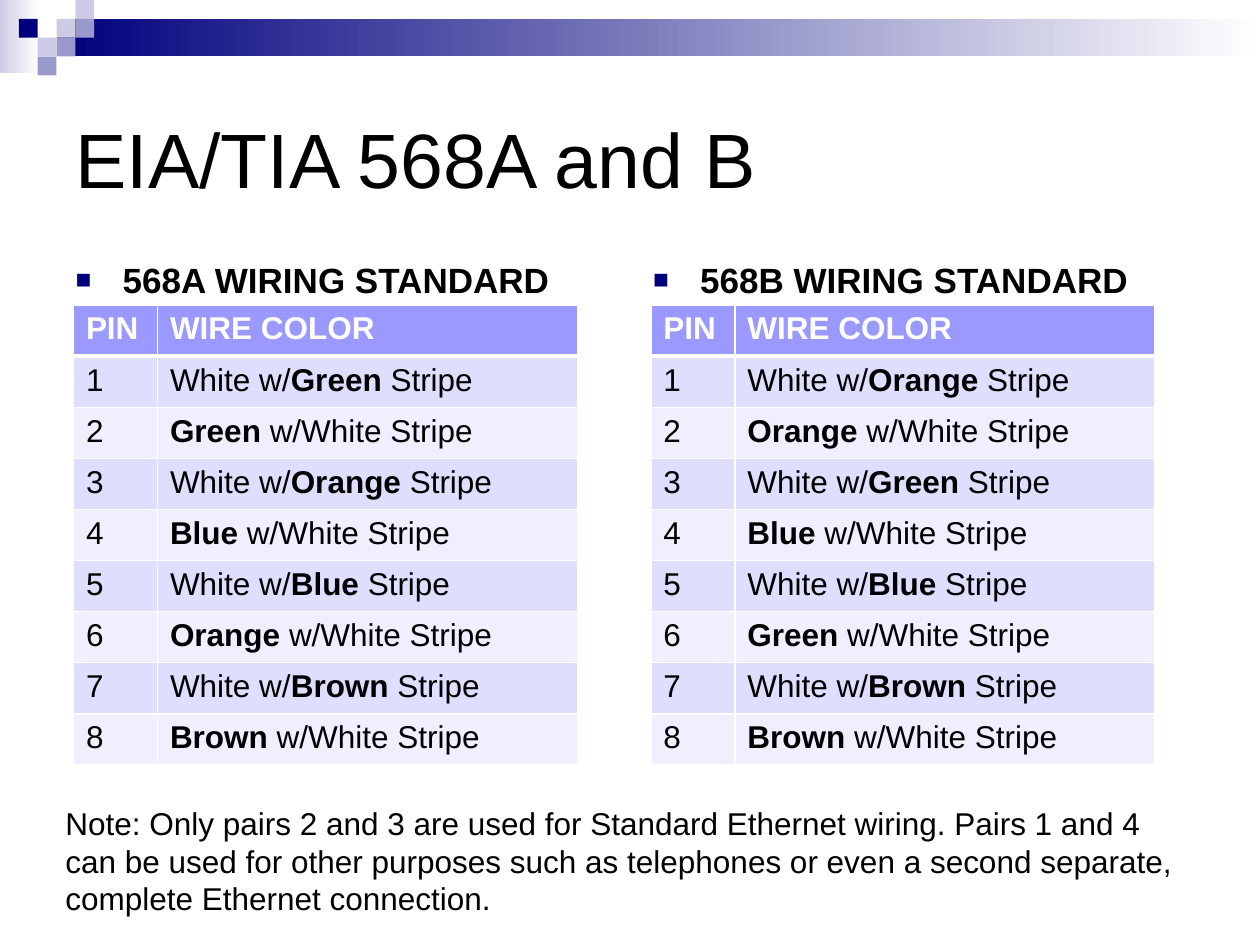
from lxml import etree
from pptx import Presentation, util as u
from pptx.dml.color import RGBColor
from pptx.enum import shapes, text
from pptx.oxml.ns import qn

HUES = {"navy": "00007D", "mid": "9999CC", "pale": "CCCCE6", "white": "FFFFFF",
        "black": "000000", "head": "9999FF", "odd": "DEDEFF", "even": "EFEFFF"}
PLAIN = {"name": "Arial", "bold": False}
NOTE = ("Note: Only pairs 2 and 3 are used for Standard Ethernet wiring. "
        "Pairs 1 and 4 can be used for other purposes such as telephones "
        "or even a second separate, complete Ethernet connection.")
WIRES = {"568A": ("Green", "Orange", "Blue", "Orange", "Brown"),
         "568B": ("Orange", "Green", "Blue", "Green", "Brown")}


def rgb(hue):
    """Return the named colour."""
    return RGBColor.from_string(HUES[hue])


def style(font, size, hue="black", **more):
    """Set the font values."""
    for key, val in {**PLAIN, "size": u.Pt(size), **more}.items():
        setattr(font, key, val)
    font.color.rgb = rgb(hue)


def place(item, box):
    """Move an item to a box given in centimetres."""
    for key, val in zip(("left", "top", "width", "height"), box):
        setattr(item, key, u.Cm(val))


def block(slide, box, hue, fade=False):
    """Add a rectangle, plain or fading to white."""
    item = slide.shapes.add_shape(shapes.MSO_SHAPE.RECTANGLE, *map(u.Cm, box))
    item.shadow.inherit = False
    item.line.fill.background()
    if not fade:
        item.fill.solid()
        item.fill.fore_color.rgb = rgb(hue)
        return
    item.fill.gradient()
    item.fill.gradient_angle = 0
    for stop, pos, name in zip(item.fill.gradient_stops, (0, 1), (hue, "white")):
        stop.position = pos
        stop.color.rgb = rgb(name)


def banner(slide, box):
    """Draw the fading bars and the mosaic of squares."""
    left, top, width, side = box
    block(slide, (left, top, 0.79, 1.47), "pale", True)
    block(slide, (left + 3 * side, top + side, width - 3 * side, 2 * side), "navy", True)
    tiles = ((3, 1, "pale"), (4, 0, "pale"), (4, 1, "mid"), (2, 2, "pale"),
             (1, 1, "navy"), (3, 2, "mid"), (2, 3, "mid"))
    for col, row, hue in tiles:
        block(slide, (left + col * side, top + row * side, side, side), hue)


def write(item, box, words, size, **more):
    """Place a text shape and fill it with one left-aligned paragraph."""
    place(item, box)
    frame = item.text_frame
    frame.word_wrap = True
    frame.auto_size = text.MSO_AUTO_SIZE.NONE
    frame.text = words
    para = frame.paragraphs[0]
    para.alignment = text.PP_ALIGN.LEFT
    para.space_before = u.Pt(0)
    style(para.runs[0].font, size, **more)
    return para


def bullet(para):
    """Give a paragraph a small navy square and a hanging indent."""
    props = para._p.get_or_add_pPr()
    props.set("marL", str(u.Cm(0.95)))
    props.set("indent", str(u.Cm(-0.95)))
    tint = etree.SubElement(props, qn("a:buClr"))
    etree.SubElement(tint, qn("a:srgbClr"), val=HUES["navy"])
    etree.SubElement(props, qn("a:buSzPct"), val="75000")
    etree.SubElement(props, qn("a:buFont"), typeface="Arial")
    etree.SubElement(props, qn("a:buChar"), char="■")


def edge(cell, base):
    """Draw white cell borders, with the given bottom width in points."""
    props = cell._tc.get_or_add_tcPr()
    for spot, (side, wide) in enumerate(zip("LRTB", (1, 1, 1, base))):
        line = etree.Element(qn("a:ln" + side), w=str(u.Pt(wide)))
        fill = etree.SubElement(line, qn("a:solidFill"))
        etree.SubElement(fill, qn("a:srgbClr"), val=HUES["white"])
        props.insert(spot, line)


def fill(cell, parts, hue, ink="black", base=1):
    """Fill a cell with (words, bold) parts."""
    para = cell.text_frame.paragraphs[0]
    for words, bold in parts:
        run = para.add_run()
        run.text = words
        style(run.font, 18, ink, bold=bold)
    cell.fill.solid()
    cell.fill.fore_color.rgb = rgb(hue)
    edge(cell, base)


def wires(pairs):
    """Yield the wire text of each pin as (words, bold) parts."""
    first, third, blue, sixth, last = pairs
    for pin, name in enumerate((first, first, third, blue, blue, sixth, last, last), 1):
        if pin % 2:
            yield ("White w/", False), (name, True), (" Stripe", False)
        else:
            yield (name, True), (" w/White Stripe", False)


def chart(slide, box, pairs):
    """Add the pin table of one standard."""
    grid = slide.shapes.add_table(9, 2, *map(u.Cm, box)).table
    for col, wide in zip(grid.columns, (1 / 6, 5 / 6)):
        col.width = u.Cm(box[2] * wide)
    for col, words in enumerate(("PIN", "WIRE COLOR")):
        fill(grid.cell(0, col), [(words, True)], "head", "white", 3)
    for pin, parts in enumerate(wires(pairs), 1):
        hue = "odd" if pin % 2 else "even"
        fill(grid.cell(pin, 0), [(str(pin), False)], hue)
        fill(grid.cell(pin, 1), parts, hue)


def panel(slide, item, box, name):
    """Place the heading and the table of one standard."""
    left, top, width, height = box
    head = write(item, (left, top, width, 1.47), f"{name} WIRING STANDARD", 20, bold=True)
    bullet(head)
    chart(slide, (left + 0.21, top + 1.07, 10.16, height - 1.07), WIRES[name])


def main():
    """Build the slide and save it."""
    deck = Presentation()
    deck.slide_width, deck.slide_height = u.Cm(25.4), u.Cm(19.05)
    slide = deck.slides.add_slide(deck.slide_layouts[3])
    title, *bodies = slide.placeholders
    banner(slide, (0, 0, 25.4, 0.38))
    write(title, (1.27, 1.27, 22.86, 3.81), "EIA/TIA 568A and B", 44)
    title.text_frame.vertical_anchor = text.MSO_ANCHOR.MIDDLE
    for left, item, name in zip((1.27, 12.91), bodies, WIRES):
        panel(slide, item, (left, 5.08, 11.23, 10.34), name)
    note = slide.shapes.add_textbox(0, 0, 0, 0)
    write(note, (1.07, 16.08, 23.06, 2.57), NOTE, 18)
    deck.save("out.pptx")


if __name__ == "__main__":
    main()
